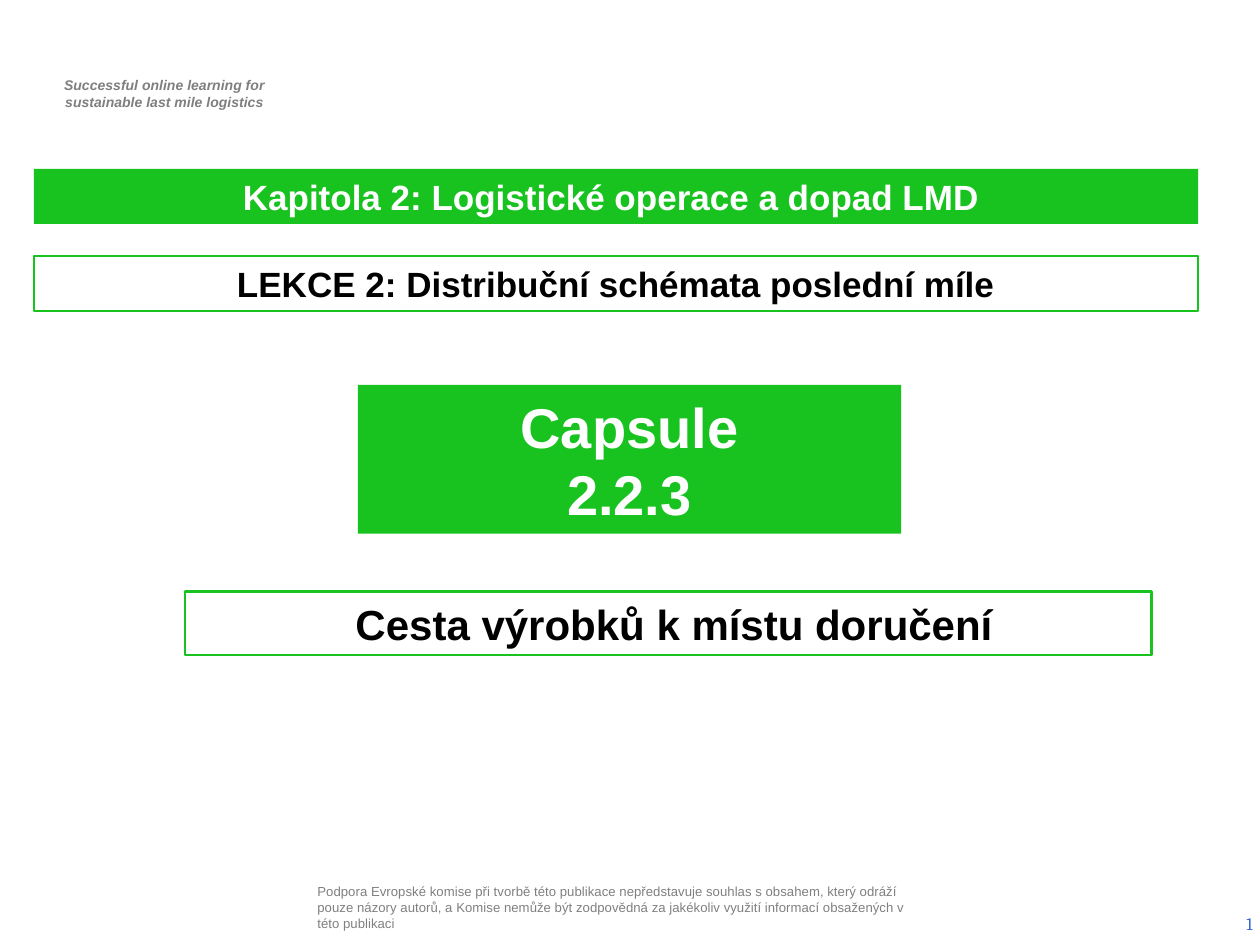
import dataclasses
import pptx
import pptx.util
import pptx.dml.color
import pptx.enum.shapes
import pptx.enum.text

Pt = pptx.util.Pt
Align = pptx.enum.text.PP_ALIGN
Anchor = pptx.enum.text.MSO_ANCHOR


@dataclasses.dataclass(frozen=True)
class Theme:
    sans: str = "Arial"
    serif: str = "Cambria"
    green: str = "18C320"
    white: str = "FFFFFF"
    black: str = "000000"
    motto: str = "7F7F7F"
    grey: str = "808080"
    blue: str = "3366CC"
    tiny: float = 7.5
    small: float = 8
    page: float = 10
    head: float = 20
    topic: float = 24
    hero: float = 32


class Deck:
    """Holds the theme and the current slide, and draws each kind of element."""

    def __init__(self, theme):
        self.theme = theme
        self.prs = pptx.Presentation()
        self.prs.slide_width, self.prs.slide_height = Pt(720), Pt(540)
        self.slide = self.prs.slides.add_slide(self.prs.slide_layouts[5])

    def label(self, shape, lines, size, color, align=Align.CENTER, bold=True,
              italic=False, face=None, anchor=Anchor.MIDDLE, inset=(7.2, 3.6)):
        frame = shape.text_frame
        frame.word_wrap = True
        frame.auto_size = pptx.enum.text.MSO_AUTO_SIZE.NONE
        frame.vertical_anchor = anchor
        frame.margin_left = frame.margin_right = Pt(inset[0])
        frame.margin_top = frame.margin_bottom = Pt(inset[1])
        frame.text = "\n".join(lines)
        for para in frame.paragraphs:
            para.alignment = align
            font = para.font
            font.name, font.size = face or self.theme.sans, Pt(size)
            font.bold, font.italic = bold, italic
            font.color.rgb = pptx.dml.color.RGBColor.from_string(color)

    def paint(self, shape, color):
        shape.fill.solid()
        shape.fill.fore_color.rgb = pptx.dml.color.RGBColor.from_string(color)

    def title(self, box, text):
        shape = self.slide.shapes.title
        shape.left, shape.top, shape.width, shape.height = map(Pt, box)
        self.paint(shape, self.theme.green)
        self.label(shape, [text], self.theme.head, self.theme.white)

    def text(self, box, lines, size, color, **style):
        shape = self.slide.shapes.add_textbox(*map(Pt, box))
        self.label(shape, lines, size, color, **style)

    def panel(self, box, lines, size, edge=None):
        kind = pptx.enum.shapes.MSO_SHAPE.RECTANGLE
        shape = self.slide.shapes.add_shape(kind, *map(Pt, box))
        shape.shadow.inherit = False
        if edge:
            shape.fill.background()
            shape.line.width = Pt(edge)
            shape.line.color.rgb = pptx.dml.color.RGBColor.from_string(
                self.theme.green)
        else:
            self.paint(shape, self.theme.green)
            shape.line.fill.background()
        color = self.theme.black if edge else self.theme.white
        self.label(shape, lines, size, color)

    def save(self):
        self.prs.save("out.pptx")


def main():
    look = Theme()
    deck = Deck(look)
    deck.text((21, 40.3, 146, 26.6),
              ["Successful online learning for", "sustainable last mile logistics"],
              look.small, look.motto, italic=True, anchor=Anchor.TOP)
    deck.title((19.4, 96.5, 665.3, 31.5),
               "Kapitola 2: Logistické operace a dopad LMD ")
    deck.panel((19.4, 146.2, 665.3, 31.5),
               ["LEKCE 2: Distribuční schémata poslední míle"], look.head, 0.75)
    deck.panel((204.5, 220, 310.5, 85), ["Capsule", "2.2.3"], look.hero)
    deck.panel((105.8, 338, 552.2, 36.3),
               [" Cesta výrobků k místu doručení"], look.topic, 1.5)
    deck.text((178.5, 500.4, 355, 36),
              ["Podpora Evropské komise při tvorbě této publikace nepředstavuje "
               "souhlas s obsahem, který odráží pouze názory autorů, a Komise "
               "nemůže být zodpovědná za jakékoliv využití informací "
               "obsažených v této publikaci"],
              look.tiny, look.grey, align=Align.LEFT, bold=False, inset=(2.9, 2.9))
    deck.text((555.1, 513.4, 167.8, 28.8), ["1"], look.page, look.blue,
              align=Align.RIGHT, bold=False, face=look.serif)
    deck.save()


if __name__ == "__main__":
    main()
